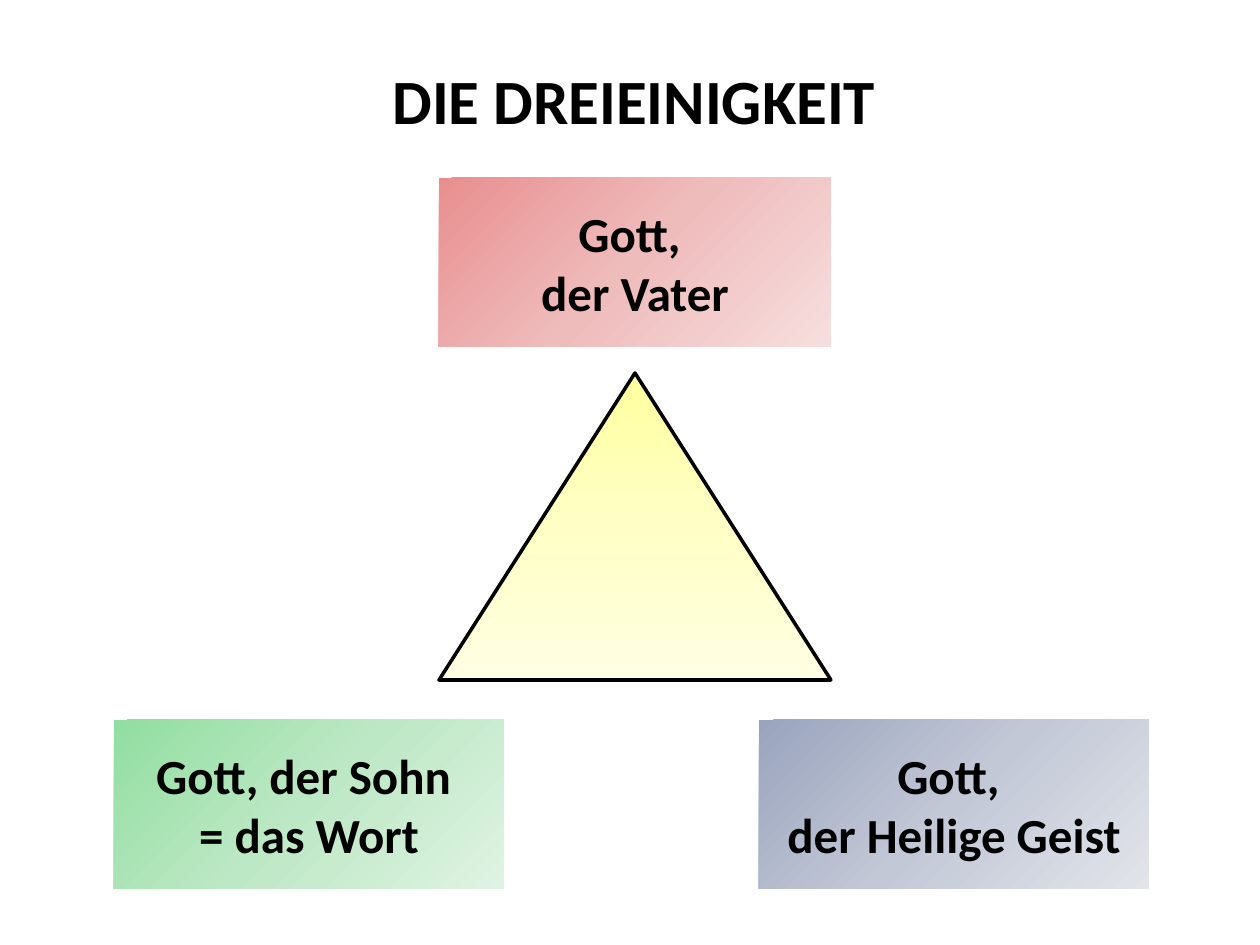
import copy

import lxml.etree
import pptx
import pptx.dml.color
import pptx.enum.shapes
import pptx.enum.text
import pptx.oxml.ns
import pptx.util

EMU_PER_PX = 914400 / 126
COLORS = {
    "black": "000000",
    "white": "FFFFFF",
    "red": ["E98F8F", "EFBCBC", "F7DEDE"],
    "green": ["91DEA0", "BDE8C5", "DFF3E3"],
    "blue": ["9AA4BE", "C2C8D6", "E2E4EA"],
    "yellow": ["FFFFA0", "FFFFC5", "FFFFE3"],
}
PERSONS = [
    (439, 178, 392, "red", ["Gott, ", "der Vater"]),
    (114, 720, 390, "green", ["Gott, der Sohn ", "= das Wort"]),
    (759, 720, 390, "blue", ["Gott, ", "der Heilige Geist"]),
]
black = pptx.dml.color.RGBColor.from_string(COLORS["black"])
shape_types = pptx.enum.shapes.MSO_SHAPE


def px(length):
    return round(length * EMU_PER_PX)


def write_lines(shape, lines, size):
    """Write centred bold lines as one paragraph with line breaks."""
    frame = shape.text_frame
    frame.word_wrap = True
    frame.vertical_anchor = pptx.enum.text.MSO_ANCHOR.TOP
    para = frame.paragraphs[0]
    para.alignment = pptx.enum.text.PP_ALIGN.CENTER
    for index, line in enumerate(lines):
        if index:
            para.add_line_break()
        span = para.add_run()
        span.text = line
        span.font.name = "Calibri"
        span.font.size = pptx.util.Pt(size)
        span.font.bold = True
        span.font.color.rgb = black


deck = pptx.Presentation()
deck.slide_width, deck.slide_height = px(1260), px(945)
page = deck.slides.add_slide(deck.slide_layouts[6])

# Title on a translucent white band
title = page.shapes.add_textbox(px(54), px(55), px(1160), px(79))
title.fill.solid()
title.fill.fore_color.rgb = pptx.dml.color.RGBColor.from_string(COLORS["white"])
white = title._element.spPr.find(".//" + pptx.oxml.ns.qn("a:srgbClr"))
lxml.etree.SubElement(white, pptx.oxml.ns.qn("a:alpha"), val="60000")
write_lines(title, ["DIE DREIEINIGKEIT"], 36)

# The three persons
gradients = []
for left, top, width, color, lines in PERSONS:
    box = page.shapes.add_shape(shape_types.RECTANGLE, px(left), px(top), px(width), px(169))
    box.line.fill.background()
    frame = box.text_frame
    frame.margin_left = frame.margin_right = pptx.util.Inches(0.1)
    frame.margin_top = frame.margin_bottom = pptx.util.Inches(0.2)
    frame.auto_size = pptx.enum.text.MSO_AUTO_SIZE.SHAPE_TO_FIT_TEXT
    write_lines(box, lines, 28)
    gradients.append((box, color, 45))

# The triangle between them
triangle = page.shapes.add_shape(
    shape_types.ISOSCELES_TRIANGLE, px(439), px(373), px(392), px(307))
triangle.line.color.rgb = black
triangle.line.width = pptx.util.Pt(2)
gradients.append((triangle, "yellow", 90))

# Three-stop gradients; python-pptx counts angles counter-clockwise
for shape, color, angle in gradients:
    shape.shadow.inherit = False
    shape.fill.gradient()
    shape.fill.gradient_angle = 360 - angle
    stop_list = shape._element.spPr.find(".//" + pptx.oxml.ns.qn("a:gsLst"))
    stop_list.insert(1, copy.deepcopy(stop_list[0]))
    for index, stop in enumerate(shape.fill.gradient_stops):
        stop.position = index / 2
        stop.color.rgb = pptx.dml.color.RGBColor.from_string(COLORS[color][index])

deck.save("out.pptx")
